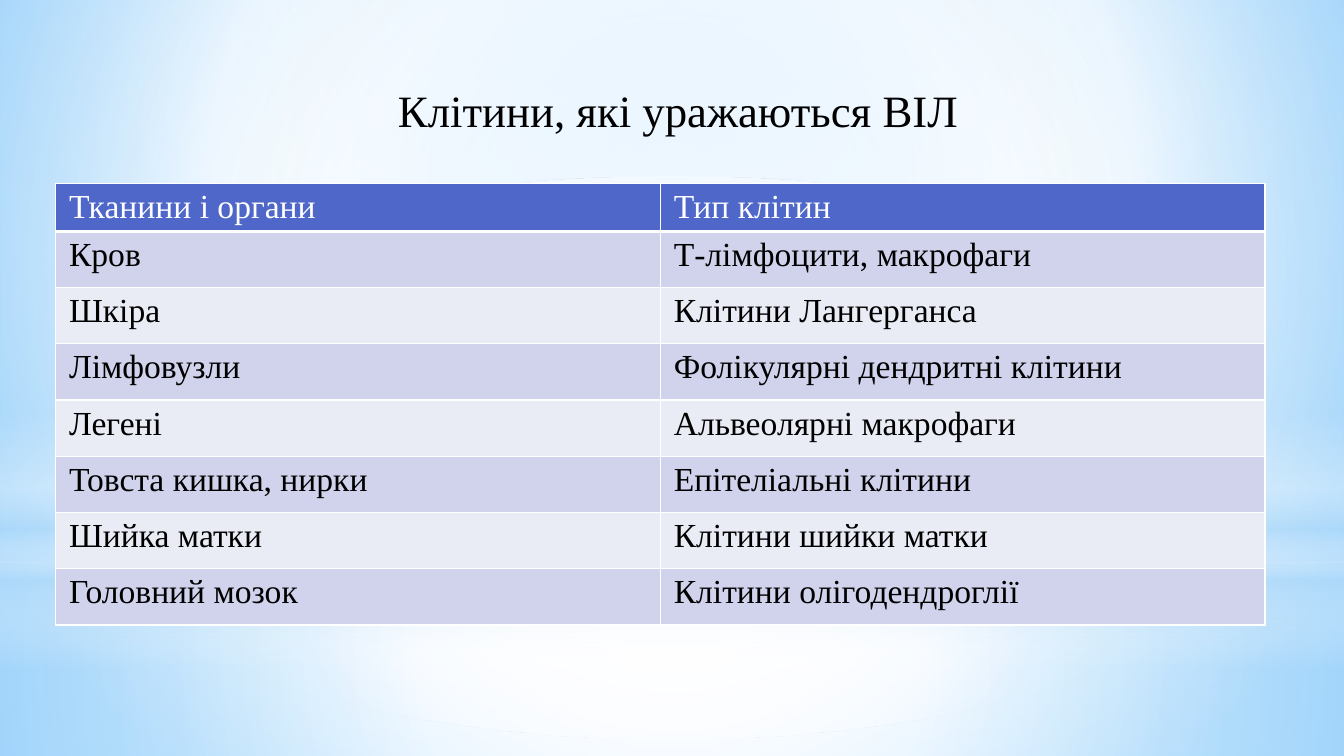
from lxml import etree
from pptx import Presentation
from pptx.dml.color import RGBColor
from pptx.enum.shapes import MSO_SHAPE
from pptx.enum.text import MSO_AUTO_SIZE
from pptx.oxml import parse_xml
from pptx.oxml.ns import qn
from pptx.util import Cm, Pt

RECTANGLE, OVAL = MSO_SHAPE.RECTANGLE, MSO_SHAPE.OVAL
FIT_SHAPE = MSO_AUTO_SIZE.SHAPE_TO_FIT_TEXT
DRAWING = "http://schemas.openxmlformats.org/drawingml/2006/main"

FONT = "Times New Roman"
WHITE, BLACK = "FFFFFF", "000000"
PALE_BLUE = "B4DCFA"
HEADER_FILL = "4E67C8"
BAND_FILLS = ["D0D3EB", "E9EBF5"]
PAGE_WIDTH, PAGE_HEIGHT = 33.87, 19.05
HEADER_HEIGHT = 1.21
CENTRE = (50, 50, 50, 50)

TITLE = "Клітини, які уражаються ВІЛ"
ROWS = [
    ("Тканини і органи", "Тип клітин"),
    ("Кров", "Т-лімфоцити, макрофаги"),
    ("Шкіра", "Клітини Лангерганса"),
    ("Лімфовузли", "Фолікулярні дендритні клітини"),
    ("Легені", "Альвеолярні макрофаги"),
    ("Товста кишка, нирки", "Епітеліальні клітини"),
    ("Шийка матки", "Клітини шийки матки"),
    ("Головний мозок", "Клітини олігодендроглії"),
]

# Stops are (position %, colour, opacity %)
PAGE_STOPS = [(0, "9ED5FF", 100), (60, WHITE, 100), (100, "5BB9FF", 100)]
PAGE_FOCUS = (20, 10, 20, 60)

# Light layers: shape, box (left, top, width, height), stops, focus (None is vertical)
LAYERS = [
    (RECTANGLE, (0, 14.17, PAGE_WIDTH, 4.88),
     [(0, WHITE, 91), (37, WHITE, 76), (100, PALE_BLUE, 79)], CENTRE),
    (RECTANGLE, (0, 0, PAGE_WIDTH, 14.17),
     [(0, WHITE, 89), (48, WHITE, 62), (100, PALE_BLUE, 79)], CENTRE),
    (RECTANGLE, (0, 10.46, PAGE_WIDTH, 6.35),
     [(0, WHITE, 0), (29, WHITE, 30), (45, PALE_BLUE, 40),
      (55, WHITE, 26), (65, PALE_BLUE, 60), (100, WHITE, 0)], None),
    (OVAL, (0, 4.45, PAGE_WIDTH, 14.17),
     [(0, WHITE, 100), (56, WHITE, 0)], CENTRE),
]


def colour(value):
    return RGBColor.from_string(value)


def paint_gradient(fill, element, stops, focus=None):
    fill.gradient()
    old = element.xpath(".//a:gradFill")[0]
    stop_xml = "".join(
        f'<a:gs pos="{position * 1000}"><a:srgbClr val="{value}">'
        f'<a:alpha val="{opacity * 1000}"/></a:srgbClr></a:gs>'
        for position, value, opacity in stops)
    if focus:
        sides = " ".join(f'{side}="{share * 1000}"' for side, share in zip("ltrb", focus))
        direction = f'<a:path path="circle"><a:fillToRect {sides}/></a:path>'
    else:
        direction = '<a:lin ang="5400000" scaled="0"/>'
    new = parse_xml(f'<a:gradFill xmlns:a="{DRAWING}" rotWithShape="1">'
                    f'<a:gsLst>{stop_xml}</a:gsLst>{direction}</a:gradFill>')
    old.getparent().replace(old, new)


def write_text(frame, text, size, value):
    span = frame.paragraphs[0].add_run()
    span.text = text
    for name, setting in {"name": FONT, "size": Pt(size), "bold": False}.items():
        setattr(span.font, name, setting)
    span.font.color.rgb = colour(value)


def add_backdrop(page):
    paint_gradient(page.background.fill, page.element, PAGE_STOPS, PAGE_FOCUS)
    for kind, box, stops, focus in LAYERS:
        layer = page.shapes.add_shape(kind, *map(Cm, box))
        layer.shadow.inherit = False
        layer.line.fill.background()
        paint_gradient(layer.fill, layer.element, stops, focus)


def add_title(page, box):
    frame = page.shapes.add_textbox(*map(Cm, box)).text_frame
    for name, setting in {"word_wrap": False, "auto_size": FIT_SHAPE}.items():
        setattr(frame, name, setting)
    write_text(frame, TITLE, 32, BLACK)


def add_borders(cell, bottom_width):
    properties = cell._tc.get_or_add_tcPr()
    for side, width in {"L": 1, "R": 1, "T": 1, "B": bottom_width}.items():
        line = etree.SubElement(properties, qn(f"a:ln{side}"), w=str(Pt(width)))
        fill = etree.SubElement(line, qn("a:solidFill"))
        etree.SubElement(fill, qn("a:srgbClr"), val=WHITE)


def add_cell_table(page, box):
    table = page.shapes.add_table(len(ROWS), len(ROWS[0]), *map(Cm, box)).table
    for name in ("first_row", "horz_banding"):
        setattr(table, name, False)
    body_height = (box[3] - HEADER_HEIGHT) / (len(ROWS) - 1)
    margins = {"margin_left": Cm(0.34), "margin_right": Cm(0.34),
               "margin_top": Cm(0.13), "margin_bottom": Cm(0.13)}

    for row, texts in enumerate(ROWS):
        header = row == 0
        table.rows[row].height = Cm(HEADER_HEIGHT if header else body_height)
        for column, text in enumerate(texts):
            cell = table.cell(row, column)
            for name, setting in margins.items():
                setattr(cell, name, setting)
            add_borders(cell, 3 if header else 1)
            cell.fill.solid()
            cell.fill.fore_color.rgb = colour(
                HEADER_FILL if header else BAND_FILLS[(row - 1) % 2])
            write_text(cell.text_frame, text, 24, WHITE if header else BLACK)


def main():
    deck = Presentation()
    deck.slide_width, deck.slide_height = Cm(PAGE_WIDTH), Cm(PAGE_HEIGHT)
    page = deck.slides.add_slide(deck.slide_layouts[6])
    add_backdrop(page)
    add_cell_table(page, (1.4, 4.62, 30.48, 11.13))
    add_title(page, (9.78, 1.96, 14.76, 1.63))
    deck.save("out.pptx")


if __name__ == "__main__":
    main()
